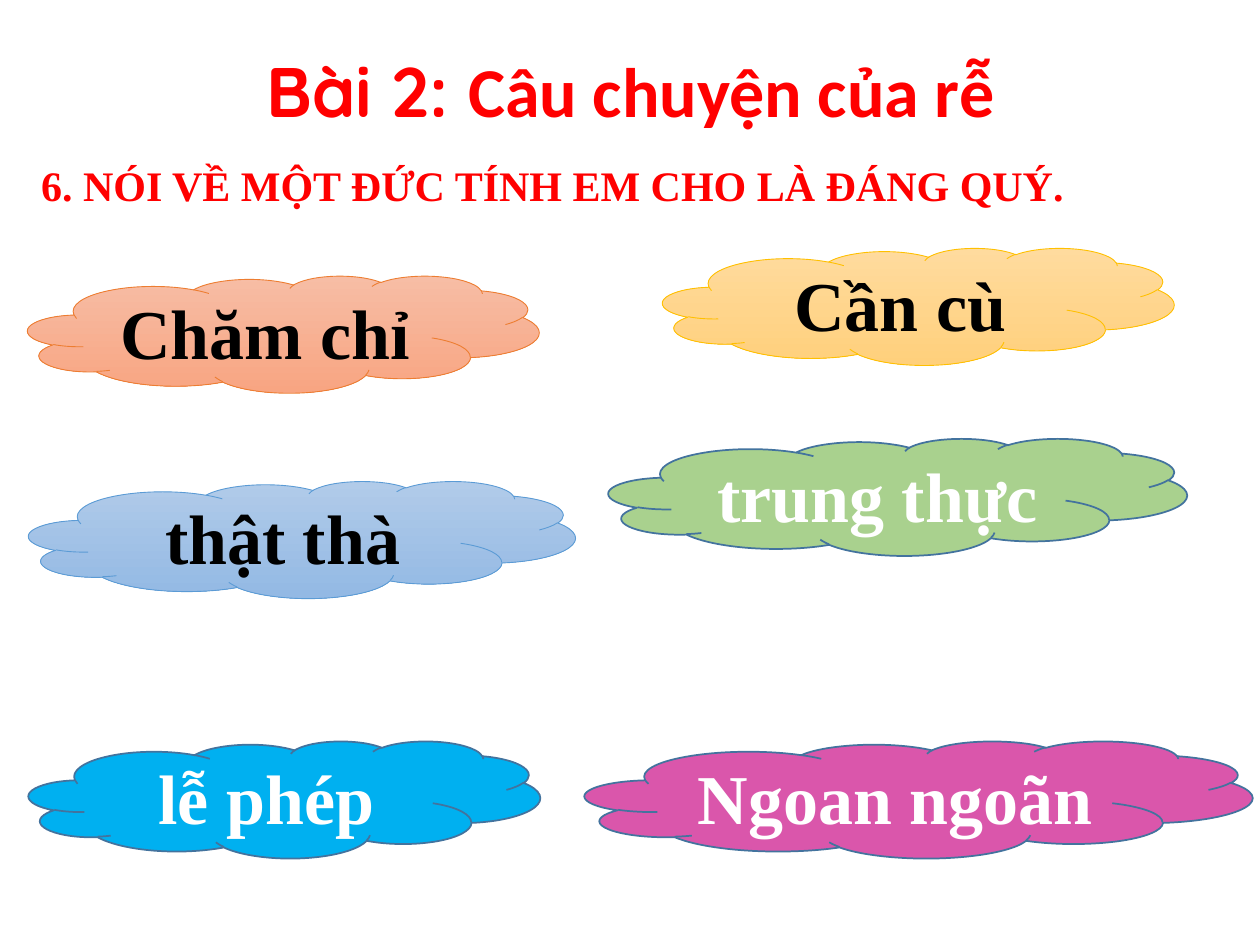
from lxml import etree
from pptx import Presentation
from pptx.dml.color import RGBColor
from pptx.enum.shapes import MSO_SHAPE
from pptx.enum.text import MSO_ANCHOR, MSO_AUTO_SIZE, PP_ALIGN
from pptx.oxml.ns import qn
from pptx.util import Cm, Pt

CLOUD = MSO_SHAPE.CLOUD
MIDDLE = MSO_ANCHOR.MIDDLE
GROW = MSO_AUTO_SIZE.SHAPE_TO_FIT_TEXT
CENTER = PP_ALIGN.CENTER
LEFT = PP_ALIGN.LEFT

SERIF = "Times New Roman"
RED, BLACK, WHITE, STEEL = "FF0000", "000000", "FFFFFF", "43739E"
CLOUD_HEIGHT = 2.36

VIRTUES = [
    ("Chăm chỉ", 0.56, 5.56, 10.31, ("F7BDA5", "F8A582"), "ED7D31"),
    ("Cần cù", 13.36, 5.0, 10.31, ("FFDB9E", "FFD07C"), "FFC000"),
    ("thật thà", 0.58, 9.7, 11.02, ("B1CBE9", "93B9E4"), "5B9BD5"),
    ("trung thực", 12.27, 8.84, 11.66, ("A9D18E",), STEEL),
    ("lễ phép", 0.58, 14.94, 10.31, ("00B0F0",), STEEL),
    ("Ngoan ngoãn", 11.79, 14.94, 13.46, ("DA56AB",), STEEL),
]


def color(code):
    """Turn a hex string into a colour."""
    return RGBColor.from_string(code)


def apply(target, values):
    """Set every attribute named in the dict."""
    for name, value in values.items():
        setattr(target, name, value)


def add_span(para, text, size, font, code):
    """Add one bold run to a paragraph."""
    span = para.add_run()
    span.text = text
    apply(span.font, {"size": Pt(size), "name": font, "bold": True})
    span.font.color.rgb = color(code)
    return span


def outline_span(span, code, width):
    """Draw a line around the letters of a run."""
    line = etree.Element(qn("a:ln"), w=str(Pt(width)))
    fill = etree.SubElement(line, qn("a:solidFill"))
    etree.SubElement(fill, qn("a:srgbClr"), val=code)
    span.font._element.insert(0, line)


def add_heading(page, left, top, width, height, align):
    """Add an empty text box and return its first paragraph."""
    box = page.shapes.add_textbox(Cm(left), Cm(top), Cm(width), Cm(height))
    apply(box.text_frame, {"word_wrap": True, "auto_size": GROW})
    para = box.text_frame.paragraphs[0]
    para.alignment = align
    return para


def fill_shape(shape, codes):
    """Fill with one colour, or with two from top to bottom."""
    if len(codes) == 1:
        shape.fill.solid()
        shape.fill.fore_color.rgb = color(codes[0])
        return
    shape.fill.gradient()
    shape.fill.gradient_angle = 270
    for stop, code in zip(shape.fill.gradient_stops, codes):
        stop.color.rgb = color(code)


def add_cloud(page, text, left, top, width, fills, line):
    """Add a cloud that holds one virtue."""
    cloud = page.shapes.add_shape(CLOUD, Cm(left), Cm(top), Cm(width), Cm(CLOUD_HEIGHT))
    cloud.shadow.inherit = False
    fill_shape(cloud, fills)
    shaded = len(fills) > 1
    cloud.line.color.rgb = color(line)
    cloud.line.width = Pt(0.5 if shaded else 1)
    apply(cloud.text_frame, {"word_wrap": True, "vertical_anchor": MIDDLE})
    para = cloud.text_frame.paragraphs[0]
    para.alignment = CENTER
    add_span(para, text, 40, SERIF, BLACK if shaded else WHITE)


def main():
    """Build the slide and save it."""
    deck = Presentation()
    apply(deck, {"slide_width": Cm(25.4), "slide_height": Cm(19.05)})
    page = deck.slides.add_slide(deck.slide_layouts[6])

    title = add_heading(page, 1.37, 0.84, 22.68, 1.9, CENTER)
    for text, font in (("Bài 2: ", "Quicksand"), ("Câu chuyện của rễ", "Calibri")):
        outline_span(add_span(title, text, 40, font, RED), WHITE, 0.75)

    task = add_heading(page, 0.58, 3.1, 21.21, 1.27, LEFT)
    add_span(task, "6. NÓI VỀ MỘT ĐỨC TÍNH EM CHO LÀ ĐÁNG QUÝ.", 24, SERIF, RED)

    for virtue in VIRTUES:
        add_cloud(page, *virtue)
    deck.save("out.pptx")


if __name__ == "__main__":
    main()
